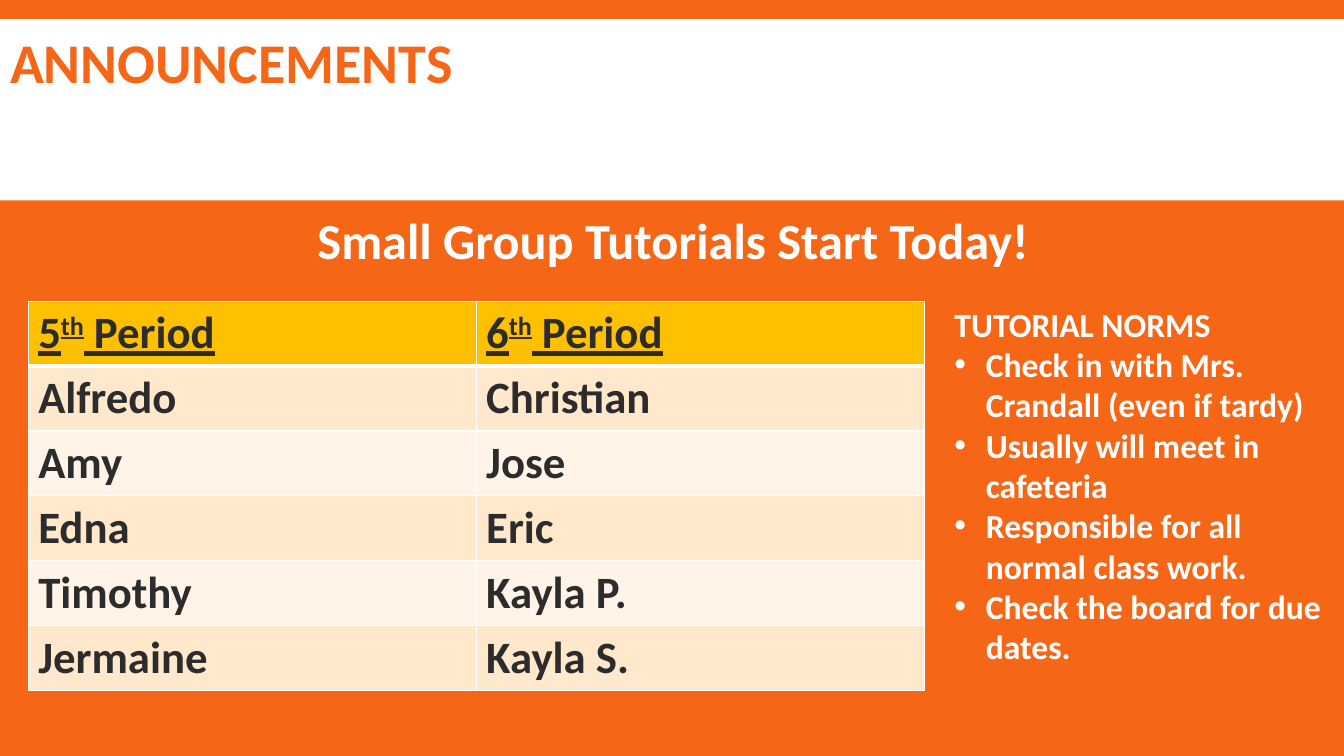
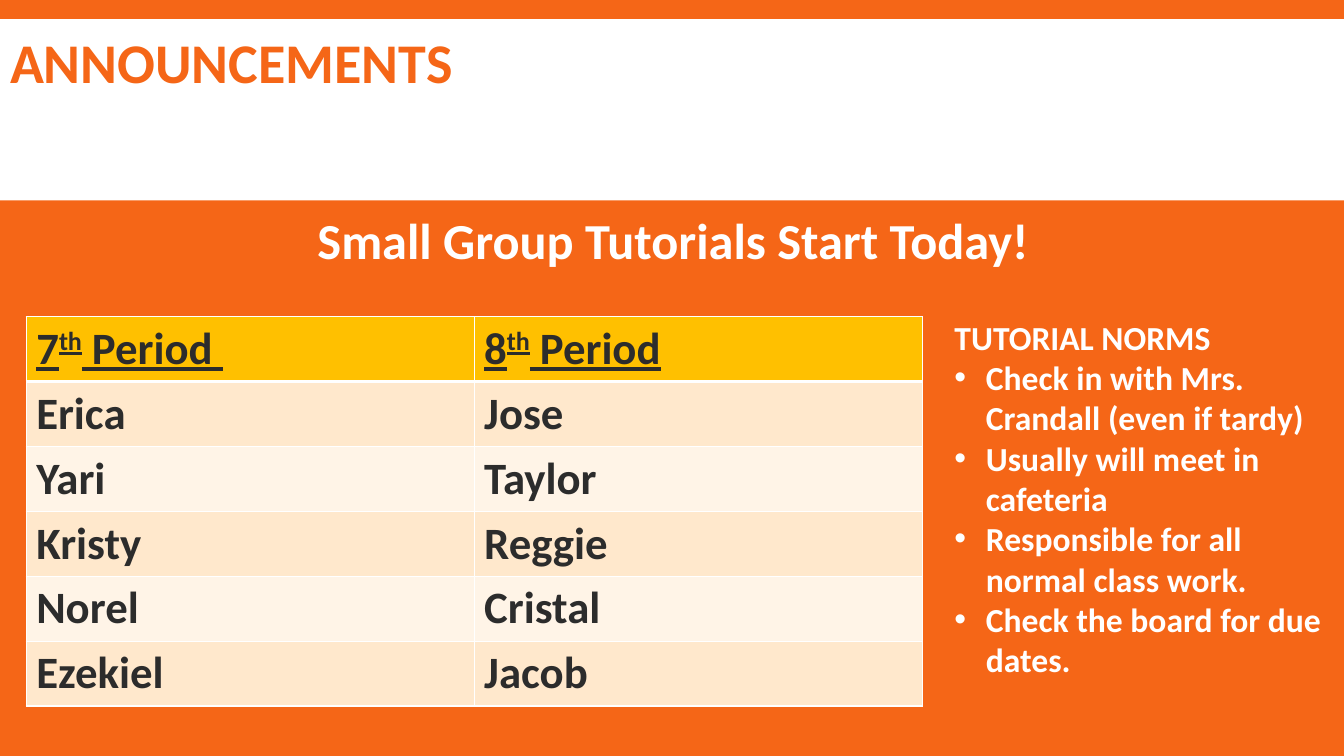
from dataclasses import dataclass

from lxml.etree import SubElement
from pptx import Presentation
from pptx.dml.color import RGBColor
from pptx.enum.shapes import MSO_SHAPE as Preset
from pptx.enum.text import MSO_ANCHOR as Anchor, MSO_AUTO_SIZE as AutoSize, PP_ALIGN as Align
from pptx.oxml import parse_xml
from pptx.oxml.ns import nsdecls, qn
from pptx.util import Cm, Pt


@dataclass(frozen=True)
class Theme:
    font: str = "Calibri"
    orange: str = "F56617"
    white: str = "FFFFFF"
    ink: str = "2C2C2C"
    header: str = "FFC000"
    bands: tuple = ("FFF4E7", "FFE8CC")
    title_size: int = 40
    subtitle_size: int = 36
    table_size: int = 32
    norms_size: int = 24


theme = Theme()


def write(paragraph, text, *, size, color, underline=None, raised=False):
    run = paragraph.add_run()
    run.text = text
    run.font.name = theme.font
    run.font.size = Pt(size)
    run.font.bold = True
    run.font.underline = underline
    run.font.color.rgb = RGBColor.from_string(color)
    if raised:
        run._r.get_or_add_rPr().set("baseline", "30000")


def set_bullet(paragraph, symbol=None, indent=0):
    properties = paragraph._p.get_or_add_pPr()
    properties.set("marL", str(Cm(indent)))
    properties.set("indent", str(-Cm(indent)))
    if symbol:
        SubElement(properties, qn("a:buChar")).set("char", symbol)
    else:
        SubElement(properties, qn("a:buNone"))


norms = [
    "Check in with Mrs. Crandall (even if tardy)",
    "Usually will meet in cafeteria",
    "Responsible for all normal class work.",
    "Check the board for due dates.",
]
announcements = [
    {
        "table_at": (0.71, 7.59),
        "norms_top": 7.52,
        "periods": [("5", " Period"), ("6", " Period")],
        "students": [
            ("Alfredo", "Christian"),
            ("Amy", "Jose"),
            ("Edna", "Eric"),
            ("Timothy", "Kayla P."),
            ("Jermaine", "Kayla S."),
        ],
    },
    {
        "table_at": (0.66, 7.98),
        "norms_top": 7.85,
        "periods": [("7", " Period "), ("8", " Period")],
        "students": [
            ("Erica", "Jose"),
            ("Yari", "Taylor"),
            ("Kristy", "Reggie"),
            ("Norel", "Cristal"),
            ("Ezekiel", "Jacob"),
        ],
    },
]

presentation = Presentation()
presentation.slide_width = Cm(33.87)
presentation.slide_height = Cm(19.05)
master = presentation.slide_master
master.background.fill.solid()
master.background.fill.fore_color.rgb = RGBColor.from_string(theme.orange)

layout = presentation.slide_layouts.get_by_name("Two Content")
places = [(0, -0.41, 27.18, 4.19), (3.38, 5.31, 27.18, 1.8), (23.8, 7.52, 10.06, 9.5)]
for placeholder, place in zip(layout.placeholders, places):
    placeholder.left, placeholder.top, placeholder.width, placeholder.height = map(Cm, place)

for number, announcement in enumerate(announcements):
    slide = presentation.slides.add_slide(layout)
    if number == 0:
        band = slide.shapes.add_shape(Preset.RECTANGLE, 0, Cm(0.48), presentation.slide_width, Cm(4.57))
        band.shadow.inherit = False
        band.fill.solid()
        band.fill.fore_color.rgb = RGBColor.from_string(theme.white)
        band.line.fill.background()
        master.shapes.element.insert(2, band.element)

    title, subtitle, norms_box = slide.placeholders
    for placeholder in (title, subtitle, norms_box):
        placeholder.text_frame.auto_size = AutoSize.NONE

    title.text_frame.vertical_anchor = Anchor.MIDDLE
    paragraph = title.text_frame.paragraphs[0]
    paragraph.alignment = Align.LEFT
    paragraph.line_spacing = 0.85
    write(paragraph, "ANNOUNCEMENTS", size=theme.title_size, color=theme.orange)

    paragraph = subtitle.text_frame.paragraphs[0]
    paragraph.alignment = Align.CENTER
    paragraph.line_spacing = 0.9
    paragraph.space_before = Pt(12)
    paragraph.space_after = Pt(2)
    set_bullet(paragraph)
    write(paragraph, "Small Group Tutorials Start Today!", size=theme.subtitle_size, color=theme.white)

    norms_box.left, norms_box.top = Cm(23.8), Cm(announcement["norms_top"])
    norms_box.width, norms_box.height = Cm(10.06), Cm(9.5)
    for index, text in enumerate(["TUTORIAL NORMS", *norms]):
        frame = norms_box.text_frame
        paragraph = frame.add_paragraph() if index else frame.paragraphs[0]
        paragraph.space_before = Pt(0)
        if index:
            set_bullet(paragraph, "•", 0.79)
        else:
            set_bullet(paragraph)
        write(paragraph, text, size=theme.norms_size, color=theme.white)

    rows = [announcement["periods"], *announcement["students"]]
    left, top = announcement["table_at"]
    table = slide.shapes.add_table(
        len(rows), 2, Cm(left), Cm(top), Cm(22.58), Cm(1.63 * len(rows))
    ).table
    for row_index, row in enumerate(rows):
        for column_index, entry in enumerate(row):
            cell = table.cell(row_index, column_index)
            paragraph = cell.text_frame.paragraphs[0]
            if row_index == 0:
                fill = theme.header
                ordinal, label = entry
                for text, raised in ((ordinal, False), ("th", True), (label, False)):
                    write(paragraph, text, size=theme.table_size, color=theme.ink, underline=True, raised=raised)
            else:
                fill = theme.bands[row_index % 2]
                write(paragraph, entry, size=theme.table_size, color=theme.ink)
            cell.fill.solid()
            cell.fill.fore_color.rgb = RGBColor.from_string(fill)
            for position, side in enumerate("LRTB"):
                thick = (row_index, side) in ((0, "B"), (1, "T"))
                border = parse_xml(
                    f'<a:ln{side} {nsdecls("a")} w="{Pt(3 if thick else 1)}"><a:solidFill>'
                    f'<a:srgbClr val="{theme.white}"/></a:solidFill></a:ln{side}>'
                )
                cell._tc.get_or_add_tcPr().insert(position, border)

presentation.save("out.pptx")
